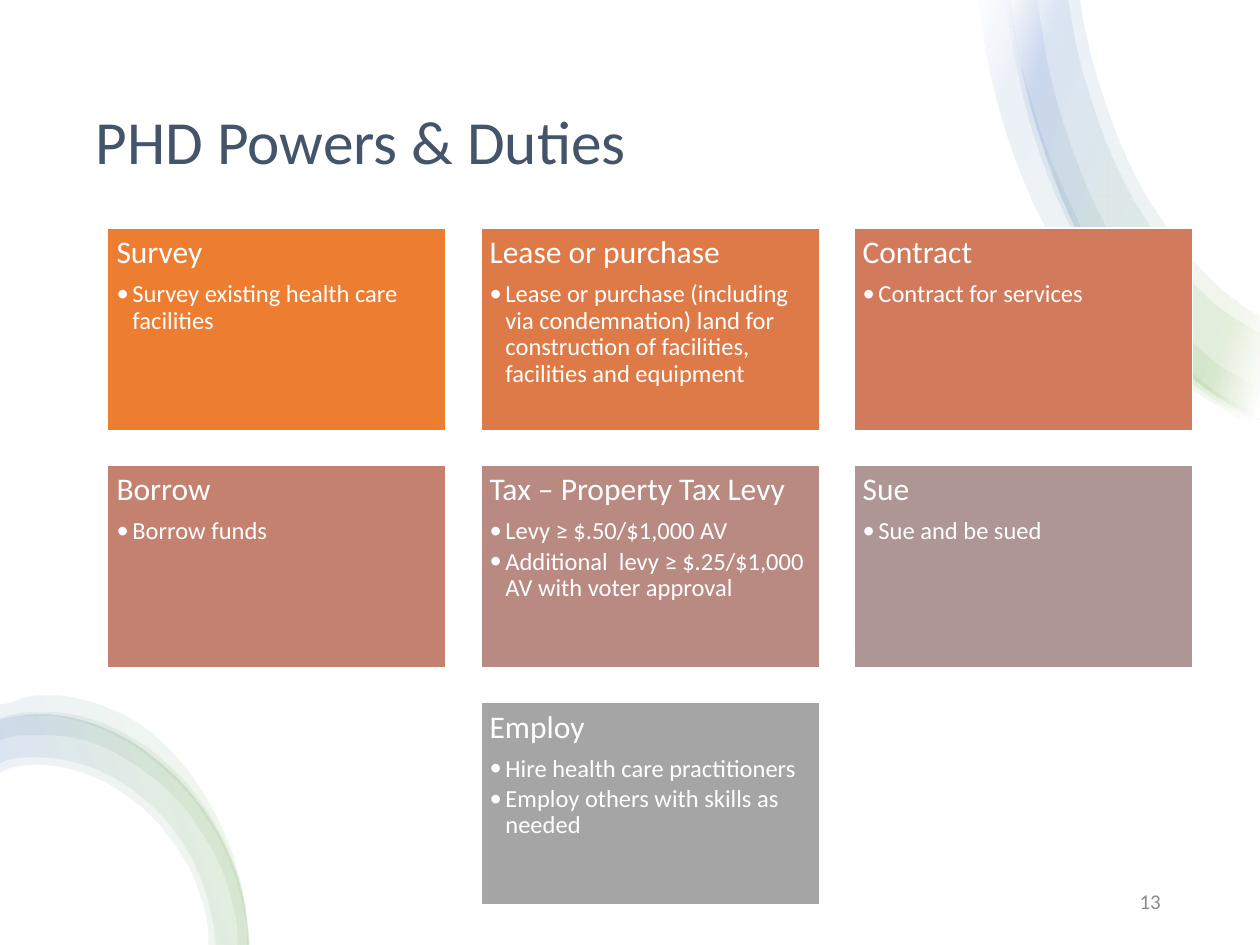
from dataclasses import dataclass
from math import dist
from typing import Any

from lxml.etree import SubElement
from pptx import Presentation
from pptx.dml.color import RGBColor as Rgb
from pptx.enum.shapes import MSO_SHAPE as ShapeKind
from pptx.enum.text import MSO_ANCHOR as Anchor, PP_ALIGN as Align
from pptx.oxml.ns import qn
from pptx.util import Cm, Pt

Points = tuple[tuple[float, float], ...]


@dataclass(frozen=True)
class Theme:
    font: str = "Calibri"
    background: str = "FFFFFF"
    title: str = "44546A"
    card_text: str = "FFFFFF"
    number: str = "8C8C8C"
    title_size: int = 35
    heading_size: int = 18
    bullet_size: int = 14
    number_size: int = 12
    ribbon_stops: tuple = ((2, "FFFFFF"), (16, "70AD47"), (85, "4472C4"), (100, "FFFFFF"))
    ribbon_opacity: int = 10
    top_angle: int = 160
    low_angle: int = 200


@dataclass(frozen=True)
class Card:
    column: int
    row: int
    color: str
    heading: str
    bullets: tuple[str, ...]


@dataclass(frozen=True)
class Ribbon:
    angle: int
    outer: Points
    inner: Points


THEME = Theme()
TOP, LOW = THEME.top_angle, THEME.low_angle
CARDS = (
    Card(0, 0, "ED7D31", "Survey", ("Survey existing health care facilities",)),
    Card(1, 0, "DE7A47", "Lease or purchase",
         ("Lease or purchase (including via condemnation) land for construction of facilities, "
          "facilities and equipment",)),
    Card(2, 0, "D17B5C", "Contract", ("Contract for services",)),
    Card(0, 1, "C48170", "Borrow", ("Borrow funds",)),
    Card(1, 1, "B98A82", "Tax – Property Tax Levy",
         ("Levy ≥ $.50/$1,000 AV", "Additional  levy ≥ $.25/$1,000 AV with voter approval")),
    Card(2, 1, "AE9694", "Sue", ("Sue and be sued",)),
    Card(1, 2, "A5A5A5", "Employ",
         ("Hire health care practitioners", "Employ others with skills as needed")),
)

TOP_EDGE: Points = ((1000, 332), (982, 324), (918, 274), (864, 200), (825, 107), (802, 4), (800, -9))
LOW_EDGE: Points = ((197, 750), (196, 735), (177, 669), (139, 616), (88, 580), (30, 567), (3, 571), (0, 572))
RIBBONS = (
    Ribbon(TOP, ((1000, 335), (998, 335), (962, 319), (938, 304), (916, 287), (874, 245), (855, 219),
                 (837, 192), (808, 131), (781, 26), (777, -9)),
           ((801, -9), (805, 19), (811, 52), (820, 84), (830, 115), (855, 173), (869, 201),
            (886, 227), (922, 273), (943, 293), (965, 310), (982, 320), (1000, 328))),
    Ribbon(TOP, TOP_EDGE, ((856, -9), (869, 55), (915, 164), (980, 238), (1000, 251))),
    Ribbon(TOP, ((1000, 333), (982, 327), (959, 314), (880, 233), (849, 179), (824, 119), (801, 20),
                 (797, -9)),
           ((822, -9), (825, 13), (830, 44), (846, 104), (896, 211), (930, 255), (968, 290), (1000, 308))),
    Ribbon(TOP, TOP_EDGE, ((847, -9), (860, 59), (908, 172), (976, 250), (1000, 264))),
    Ribbon(LOW, LOW_EDGE,
           ((0, 613), (8, 610), (30, 607), (80, 619), (124, 652), (155, 700), (165, 741), (165, 750))),
    Ribbon(LOW, LOW_EDGE,
           ((0, 606), (7, 603), (30, 601), (82, 613), (128, 647), (159, 697), (170, 740), (171, 750))),
    Ribbon(LOW, ((197, 750), (196, 736), (194, 719), (185, 685), (152, 627), (131, 605), (106, 587),
                 (52, 567), (38, 566), (24, 566), (9, 568), (0, 571)),
           ((0, 588), (11, 585), (24, 584), (50, 585), (76, 591), (100, 603), (144, 639),
            (161, 663), (176, 691), (185, 721), (188, 738), (188, 750))),
    Ribbon(LOW, ((198, 750), (197, 740), (187, 687), (174, 653), (157, 623), (136, 597), (111, 575),
                 (53, 553), (38, 552), (23, 553), (1, 559), (0, 559)),
           ((0, 572), (10, 569), (24, 568), (52, 570), (79, 578), (104, 591), (128, 609),
            (150, 631), (169, 658), (184, 689), (193, 722), (196, 740), (196, 750))),
)


def set_formats(target: Any, formats: dict[str, Any]) -> None:
    for name, value in formats.items():
        setattr(target, name, value)


def write_paragraph(paragraph: Any, text: str, size: int, color: str, formats: dict[str, Any]) -> None:
    set_formats(paragraph, formats)
    run = paragraph.add_run()
    run.text = text
    set_formats(run.font, {"name": THEME.font, "size": Pt(size)})
    run.font.color.rgb = Rgb.from_string(color)


def add_bullet(paragraph: Any) -> None:
    properties = paragraph._p.get_or_add_pPr()
    properties.set("marL", str(Cm(0.32)))
    properties.set("indent", str(-Cm(0.32)))
    SubElement(properties, qn("a:buFont"), typeface=THEME.font)
    SubElement(properties, qn("a:buChar"), char="•")


def curve_handles(points: Points) -> list[Points]:
    lengths = [dist(a, b) for a, b in zip(points, points[1:])]
    slopes = [tuple((q - p) / length for p, q in zip(a, b))
              for a, b, length in zip(points, points[1:], lengths)]
    tangents = [tuple((s * after + t * before) / (before + after) for s, t in zip(first, second))
                for first, second, before, after in zip(slopes, slopes[1:], lengths, lengths[1:])]
    start = tuple(2 * s - t for s, t in zip(slopes[0], tangents[0]))
    end = tuple(2 * s - t for s, t in zip(slopes[-1], tangents[-1]))
    tangents = [start, *tangents, end]
    return [(tuple(p + t * length / 3 for p, t in zip(a, leaving)),
             tuple(q - t * length / 3 for q, t in zip(b, arriving)))
            for a, b, leaving, arriving, length in zip(points, points[1:], tangents, tangents[1:], lengths)]


def draw_ribbon(slide: Any, ribbon: Ribbon) -> None:
    outline = ribbon.outer + ribbon.inner
    left, top = (min(values) for values in zip(*outline))
    builder = slide.shapes.build_freeform(*outline[0], scale=Cm(2.54) / 100)
    builder.add_line_segments(outline[1:], close=True)
    shape = builder.convert_to_shape()
    shape.shadow.inherit = False
    shape.line.fill.background()
    segments = shape.element.spPr.findall(".//" + qn("a:lnTo"))
    handles = [*curve_handles(ribbon.outer), None, *curve_handles(ribbon.inner)]
    for segment, pair in zip(segments, handles):
        if pair:
            segment.tag = qn("a:cubicBezTo")
            for index, (x, y) in enumerate(pair):
                point = SubElement(segment, qn("a:pt"), x=str(round(x - left)), y=str(round(y - top)))
                segment.insert(index, point)
    shape.fill.gradient()
    shape.fill.gradient_angle = ribbon.angle
    stops = shape.element.spPr.find(".//" + qn("a:gsLst"))
    for stop in list(stops):
        stops.remove(stop)
    for position, color in THEME.ribbon_stops:
        stop = SubElement(stops, qn("a:gs"), pos=str(position * 1000))
        tint = SubElement(stop, qn("a:srgbClr"), val=color)
        SubElement(tint, qn("a:alpha"), val=str(THEME.ribbon_opacity * 1000))


def draw_rectangle(slide: Any, left: float, top: float, width: float, height: float, color: str) -> Any:
    shape = slide.shapes.add_shape(ShapeKind.RECTANGLE, Cm(left), Cm(top), Cm(width), Cm(height))
    shape.shadow.inherit = False
    shape.fill.solid()
    shape.fill.fore_color.rgb = Rgb.from_string(color)
    shape.line.fill.background()
    return shape


def draw_card(slide: Any, card: Card) -> None:
    shape = draw_rectangle(slide, 2.17 + 7.52 * card.column, 4.59 + 4.78 * card.row, 6.83, 4.1, card.color)
    shape.line.color.rgb = Rgb.from_string(THEME.background)
    shape.line.width = Pt(1)
    frame = shape.text_frame
    margins = {f"margin_{side}": Cm(0.18) for side in ("left", "top", "right", "bottom")}
    set_formats(frame, {"word_wrap": True, "vertical_anchor": Anchor.TOP, **margins})
    layout = {"alignment": Align.LEFT, "line_spacing": 0.9}
    write_paragraph(frame.paragraphs[0], card.heading, THEME.heading_size, THEME.card_text,
                    {**layout, "space_after": Pt(6.3)})
    for bullet in card.bullets:
        paragraph = frame.add_paragraph()
        add_bullet(paragraph)
        write_paragraph(paragraph, bullet, THEME.bullet_size, THEME.card_text,
                        {**layout, "level": 1, "space_after": Pt(2.1)})


def main() -> None:
    presentation = Presentation()
    set_formats(presentation, {"slide_width": Cm(25.4), "slide_height": Cm(19.05)})
    slide = presentation.slides.add_slide(presentation.slide_layouts[5])
    title = slide.shapes.title
    backdrop = draw_rectangle(slide, 0, 0, 25.4, 19.05, THEME.background)
    title.element.addprevious(backdrop.element)
    set_formats(title, {"left": Cm(1.68), "top": Cm(1.27), "width": Cm(22.05), "height": Cm(3.3)})
    title.text_frame.vertical_anchor = Anchor.MIDDLE
    write_paragraph(title.text_frame.paragraphs[0], "PHD Powers & Duties", THEME.title_size, THEME.title,
                    {"alignment": Align.LEFT, "line_spacing": 0.9})
    for ribbon in RIBBONS:
        draw_ribbon(slide, ribbon)
    for card in CARDS:
        draw_card(slide, card)
    number = slide.shapes.add_textbox(Cm(17.93), Cm(17.65), Cm(5.72), Cm(1.02))
    set_formats(number.text_frame, {"word_wrap": True, "vertical_anchor": Anchor.MIDDLE})
    write_paragraph(number.text_frame.paragraphs[0], "13", THEME.number_size, THEME.number,
                    {"alignment": Align.RIGHT})
    presentation.save("out.pptx")


if __name__ == "__main__":
    main()
